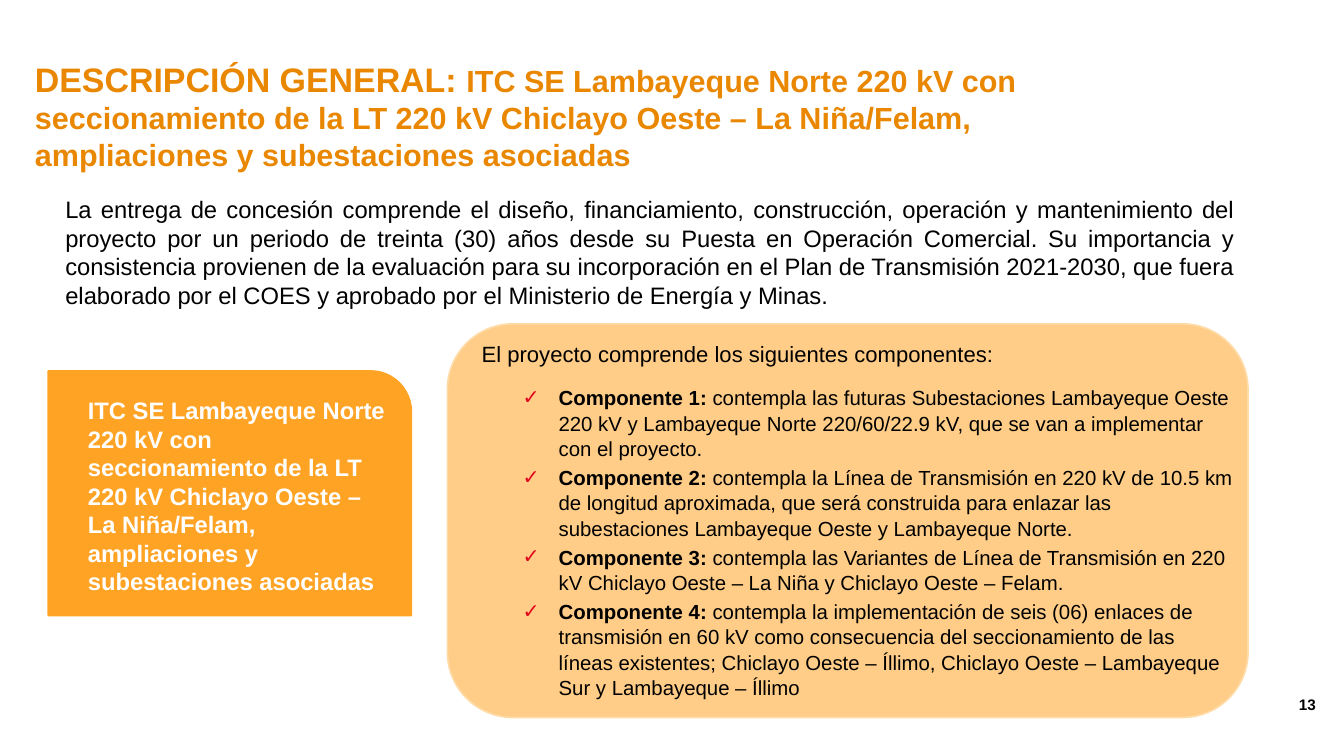
from dataclasses import dataclass
from typing import Any

from lxml.etree import SubElement
from pptx import Presentation
from pptx.dml.color import RGBColor
from pptx.enum.shapes import MSO_SHAPE
from pptx.enum.text import MSO_ANCHOR, MSO_AUTO_SIZE, PP_ALIGN
from pptx.oxml.ns import qn
from pptx.util import Inches, Pt

COLORS = {
    "title": "EA8700",
    "card": "FFA325",
    "panel": "FFCD87",
    "panel_line": "FFDBA7",
    "check": "E2051B",
    "text": "000000",
    "white": "FFFFFF",
}
PROJECT = (
    "ITC SE Lambayeque Norte 220 kV con seccionamiento de la LT 220 kV "
    "Chiclayo Oeste – La Niña/Felam, ampliaciones y subestaciones asociadas"
)
SUMMARY = (
    "La entrega de concesión comprende el diseño, financiamiento, construcción, "
    "operación y mantenimiento del proyecto por un periodo de treinta (30) años "
    "desde su Puesta en Operación Comercial. Su importancia y consistencia provienen "
    "de la evaluación para su incorporación en el Plan de Transmisión 2021-2030, que "
    "fuera elaborado por el COES y aprobado por el Ministerio de Energía y Minas."
)
COMPONENTS = [
    "contempla las futuras Subestaciones Lambayeque Oeste 220 kV y Lambayeque Norte "
    "220/60/22.9 kV, que se van a implementar con el proyecto.",
    "contempla la Línea de Transmisión en 220 kV de 10.5 km de longitud aproximada, "
    "que será construida para enlazar las subestaciones Lambayeque Oeste y "
    "Lambayeque Norte.",
    "contempla las Variantes de Línea de Transmisión en 220 kV Chiclayo Oeste – "
    "La Niña y Chiclayo Oeste – Felam.",
    "contempla la implementación de seis (06) enlaces de transmisión en 60 kV como "
    "consecuencia del seccionamiento de las líneas existentes; Chiclayo Oeste – "
    "Íllimo, Chiclayo Oeste – Lambayeque Sur y Lambayeque – Íllimo",
]


@dataclass
class Box:
    left: float
    top: float
    width: float
    height: float

    def lengths(self) -> list[int]:
        return [Inches(n) for n in (self.left, self.top, self.width, self.height)]


@dataclass
class Run:
    text: str
    size: int
    color: str = "text"
    bold: bool = False


@dataclass
class Line:
    runs: list[Run]
    format: dict[str, Any]
    margin: float = 0
    indent: float = 0
    bullet: str = ""


@dataclass
class Panel:
    kind: MSO_SHAPE
    box: Box
    fill: str
    line: str


def set_attributes(target: Any, values: dict[str, Any]) -> None:
    for name, value in values.items():
        setattr(target, name, value)


def add_panel(slide: Any, panel: Panel) -> Any:
    shape = slide.shapes.add_shape(panel.kind, *panel.box.lengths())
    shape.shadow.inherit = False
    shape.fill.solid()
    shape.fill.fore_color.rgb = RGBColor.from_string(COLORS[panel.fill])
    shape.line.color.rgb = RGBColor.from_string(COLORS[panel.line])
    shape.line.width = Pt(2)
    return shape


def set_bullet(paragraph: Any, line: Line) -> None:
    properties = paragraph._p.get_or_add_pPr()
    properties.set("marL", str(Inches(line.margin)))
    properties.set("indent", str(Inches(line.indent)))
    if not line.bullet:
        SubElement(properties, qn("a:buNone"))
        return
    color = SubElement(properties, qn("a:buClr"))
    SubElement(color, qn("a:srgbClr"), val=COLORS["check"])
    SubElement(properties, qn("a:buFont"), typeface="Arial")
    SubElement(properties, qn("a:buChar"), char=line.bullet)


def write_lines(shape: Any, box: Box, lines: list[Line]) -> None:
    set_attributes(shape, dict(zip(("left", "top", "width", "height"), box.lengths())))
    frame = shape.text_frame
    set_attributes(frame, {
        "word_wrap": True,
        "auto_size": MSO_AUTO_SIZE.NONE,
        "vertical_anchor": MSO_ANCHOR.TOP,
    })
    for index, line in enumerate(lines):
        paragraph = frame.add_paragraph() if index else frame.paragraphs[0]
        defaults = {"alignment": PP_ALIGN.LEFT, "space_before": Pt(0)}
        set_attributes(paragraph, defaults | line.format)
        set_bullet(paragraph, line)
        for part in line.runs:
            run = paragraph.add_run()
            run.text = part.text
            set_attributes(run.font, {
                "name": "Arial", "size": Pt(part.size), "bold": part.bold,
            })
            run.font.color.rgb = RGBColor.from_string(COLORS[part.color])


def add_text(slide: Any, box: Box, line: Line) -> None:
    write_lines(slide.shapes.add_textbox(*box.lengths()), box, [line])


def main() -> None:
    presentation = Presentation()
    set_attributes(presentation, {
        "slide_width": Inches(21.99), "slide_height": Inches(12.37),
    })
    slide = presentation.slides.add_slide(presentation.slide_layouts[1])
    title, body = slide.placeholders

    # Coloured panels, placed behind the placeholders
    for panel in (
        Panel(MSO_SHAPE.ROUND_1_RECTANGLE, Box(0.79, 6.07, 5.94, 4),
              "card", "card"),
        Panel(MSO_SHAPE.ROUNDED_RECTANGLE, Box(7.32, 5.3, 13.1, 6.44),
              "panel", "panel_line"),
    ):
        title.element.addprevious(add_panel(slide, panel).element)

    # Title
    write_lines(title, Box(0.47, 0.91, 16.73, 1.99), [Line([
        Run("DESCRIPCIÓN GENERAL: ", 40, "title", True),
        Run(PROJECT, 36, "title", True),
    ], {})])

    # Component list
    intro = Line([Run("El proyecto comprende los siguientes componentes:", 26)],
                 {"space_after": Pt(20.7)}, margin=0.5)
    components = [
        Line([Run(f"Componente {number}: ", 24, bold=True), Run(text, 24)],
             {"line_spacing": 1.04, "space_after": Pt(4)}, 1.76, -0.59, "✓")
        for number, text in enumerate(COMPONENTS, 1)
    ]
    write_lines(body, Box(7.28, 5.52, 13, 6.02), [intro, *components])

    # Summary, card label and page number
    add_text(slide, Box(0.47, 3.14, 19.81, 1.99),
             Line([Run(SUMMARY, 28)], {"alignment": PP_ALIGN.JUSTIFY}, margin=0.5))
    add_text(slide, Box(1.34, 6.43, 5.13, 3.4),
             Line([Run(PROJECT, 28, "white", True)], {}))
    add_text(slide, Box(19.98, 11.32, 1.65, 0.58),
             Line([Run("13", 18, bold=True)], {"alignment": PP_ALIGN.RIGHT}))

    presentation.save("out.pptx")


if __name__ == "__main__":
    main()
